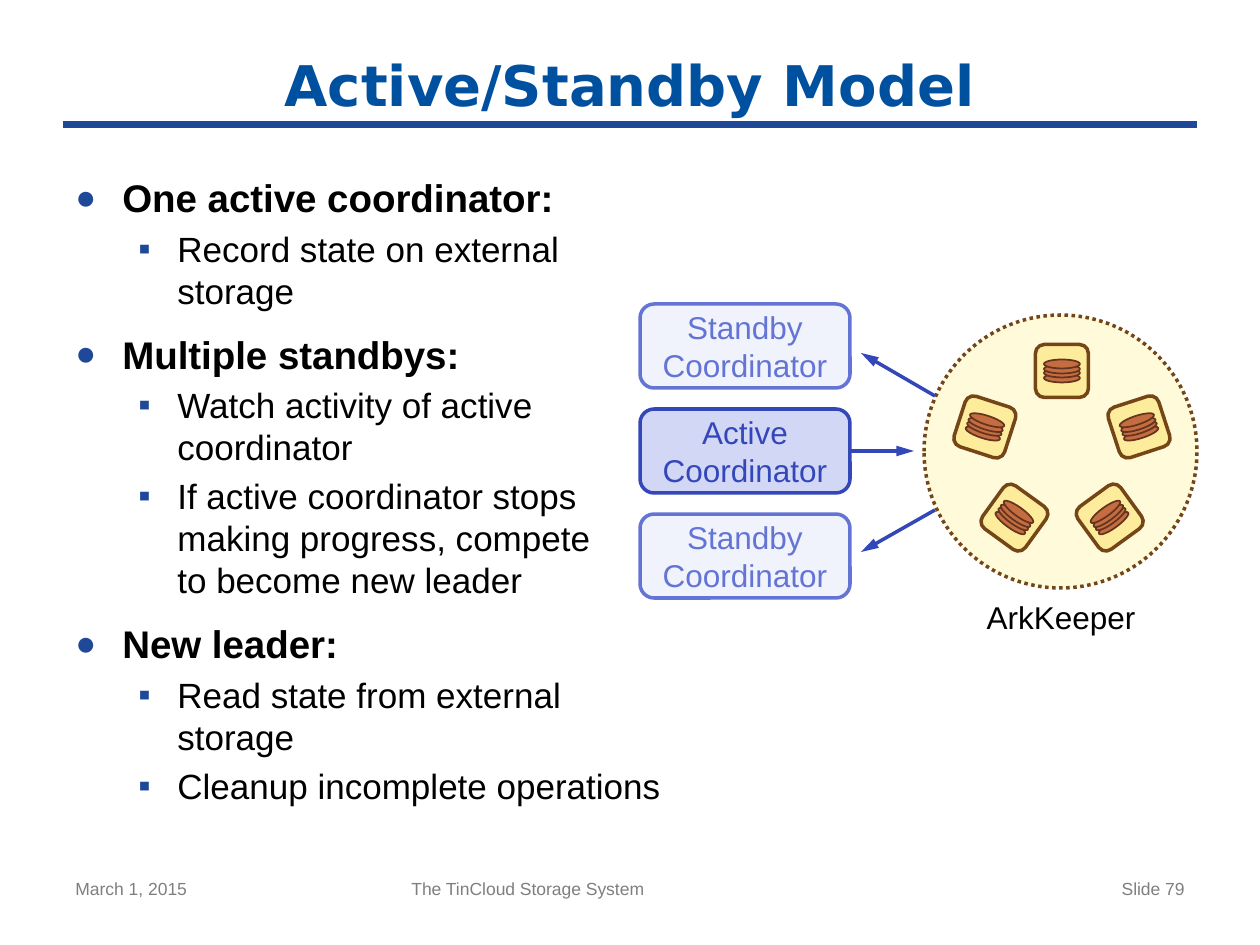
from math import cos, radians, sin

from lxml import etree
from pptx import Presentation
from pptx.dml.color import RGBColor
from pptx.enum.dml import MSO_LINE
from pptx.enum.shapes import MSO_CONNECTOR, MSO_SHAPE
from pptx.enum.text import MSO_ANCHOR, PP_ALIGN
from pptx.oxml.ns import qn
from pptx.util import Pt

PX = 914400 / 126
LEFT, CENTER, RIGHT = PP_ALIGN.LEFT, PP_ALIGN.CENTER, PP_ALIGN.RIGHT
TOP, MIDDLE = MSO_ANCHOR.TOP, MSO_ANCHOR.MIDDLE
ROUNDED, OVAL = MSO_SHAPE.ROUNDED_RECTANGLE, MSO_SHAPE.OVAL
STRAIGHT, DOTTED = MSO_CONNECTOR.STRAIGHT, MSO_LINE.ROUND_DOT
BOX_RIGHT = 3

COLORS = {
    "title": "0050A0", "rule": "1F4899", "text": "000000", "footer": "7F7F7F",
    "standby_fill": "F0F2FC", "standby": "6474D4",
    "active_fill": "D2D7F6", "active": "3447B8",
    "cluster": "FFFAD9", "server": "FEEC9D", "brown": "744516",
    "disk": "C56D41", "disk_line": "64351E",
}


def emu(px):
    return round(px * PX)


def rgb(name):
    return RGBColor.from_string(COLORS[name])


class SlideBuilder:
    font = "Arial"

    def __init__(self, slide):
        self.slide = slide

    def format(self, p, size, color, bold=False, font=None, align=LEFT):
        p.alignment = align
        for r in p.runs:
            r.font.size = Pt(size)
            r.font.bold = bold
            r.font.name = font or self.font
            r.font.color.rgb = rgb(color)

    def text(self, x, y, w, h, text, size, color, anchor=TOP, inset=True, **style):
        sp = self.slide.shapes.add_textbox(emu(x), emu(y), emu(w), emu(h))
        tf = sp.text_frame
        tf.word_wrap = True
        tf.vertical_anchor = anchor
        if not inset:
            tf.margin_left = tf.margin_right = tf.margin_top = tf.margin_bottom = 0
        tf.text = text
        self.format(tf.paragraphs[0], size, color, **style)

    def bullets(self, x, y, w, h, items):
        sp = self.slide.shapes.add_textbox(emu(x), emu(y), emu(w), emu(h))
        tf = sp.text_frame
        tf.word_wrap = True
        for i, (level, text) in enumerate(items):
            p = tf.add_paragraph() if i else tf.paragraphs[0]
            p.text = text
            p.level = level
            self.format(p, 20 if level else 22, "text", bold=not level)
            self.bullet(p, level)

    def bullet(self, p, level):
        # Percentage spacing, hanging indent and coloured bullet sign
        margin, hang, space, sign = ((102, 39, 20, "▪") if level
                                     else (47, 47, 50, "●"))
        pPr = p._p.get_or_add_pPr()
        pPr.set("marL", str(emu(margin)))
        pPr.set("indent", str(-emu(hang)))
        before = etree.SubElement(pPr, qn("a:spcBef"))
        etree.SubElement(before, qn("a:spcPct"), val=str(space * 1000))
        color = etree.SubElement(pPr, qn("a:buClr"))
        etree.SubElement(color, qn("a:srgbClr"), val=COLORS["rule"])
        if not level:
            etree.SubElement(pPr, qn("a:buSzPct"), val="90000")
        etree.SubElement(pPr, qn("a:buFont"), typeface=self.font)
        etree.SubElement(pPr, qn("a:buChar"), char=sign)

    def shape(self, kind, x, y, w, h, fill, line, width=2, rotation=0, parent=None):
        shapes = (parent or self.slide).shapes
        sp = shapes.add_shape(kind, emu(x), emu(y), emu(w), emu(h))
        sp.shadow.inherit = False
        sp.rotation = rotation
        sp.fill.solid()
        sp.fill.fore_color.rgb = rgb(fill)
        sp.line.color.rgb = rgb(line)
        sp.line.width = Pt(width)
        return sp

    def box(self, x, y, w, h, text, fill, color):
        sp = self.shape(ROUNDED, x, y, w, h, fill, color)
        tf = sp.text_frame
        tf.margin_top = tf.margin_bottom = 0
        tf.vertical_anchor = MIDDLE
        tf.text = text
        self.format(tf.paragraphs[0], 18, color, align=CENTER)
        return sp

    def server(self, cx, cy, turn, tilt):
        # A rounded square holding a tilted stack of four disks
        side, disk_w, disk_h = 53, 36, 9
        group = self.slide.shapes.add_group_shape()
        self.shape(ROUNDED, cx - side / 2, cy - side / 2, side, side,
                   "server", "brown", rotation=turn, parent=group)
        for offset in (7, 2, -2, -7):
            x = cx - offset * sin(radians(tilt))
            y = cy + offset * cos(radians(tilt))
            self.shape(OVAL, x - disk_w / 2, y - disk_h / 2, disk_w, disk_h,
                       "disk", "disk_line", 1, tilt, group)

    def line(self, x1, y1, x2, y2, color, width=2, arrow=True):
        cn = self.slide.shapes.add_connector(STRAIGHT, emu(x1), emu(y1), emu(x2), emu(y2))
        cn.line.color.rgb = rgb(color)
        cn.line.width = Pt(width)
        if arrow:
            etree.SubElement(cn.line._get_or_add_ln(), qn("a:tailEnd"),
                             type="triangle", w="med", len="lg")
        etree.SubElement(cn._element.spPr, qn("a:effectLst"))
        return cn


def main():
    prs = Presentation()
    prs.slide_width, prs.slide_height = emu(1260), emu(945)
    s = SlideBuilder(prs.slides.add_slide(prs.slide_layouts[6]))

    # Title and rule
    s.line(63, 125, 1197, 125, "rule", 4, arrow=False)
    s.text(63, 42, 1134, 84, "Active/Standby Model", 32, "title", MIDDLE,
           bold=True, font="DejaVu Sans", align=CENTER)

    # Bulleted outline
    s.bullets(63, 168, 630, 703, [
        (0, "One active coordinator:"),
        (1, "Record state on external storage"),
        (0, "Multiple standbys:"),
        (1, "Watch activity of active coordinator"),
        (1, "If active coordinator stops making progress, compete\vto become new leader"),
        (0, "New leader:"),
        (1, "Read state from external storage"),
        (1, "Cleanup incomplete operations"),
    ])

    # Footer
    for x, w, text, align in ((63, 294, "March 1, 2015", LEFT),
                              (399, 472, "The TinCloud Storage System", LEFT),
                              (903, 294, "Slide 79", RIGHT)):
        s.text(x, 872, w, 54, text, 10, "footer", align=align)

    # Storage cluster: five servers evenly spaced on a ring
    s.shape(OVAL, 924, 315, 273, 273, "cluster", "brown").line.dash_style = DOTTED
    s.text(982, 598, 158, 38, "ArkKeeper", 18, "text", inset=False, align=CENTER)
    for i, tilt in enumerate((0, -18, -36, 36, 18)):
        turn = i * 72
        s.server(1062 + 81 * sin(radians(turn)), 452 - 81 * cos(radians(turn)), turn, tilt)

    # Coordinators
    boxes = [s.box(640, 304 + 105 * i, 210, 84, f"{role}\vCoordinator",
                   f"{role.lower()}_fill", role.lower())
             for i, role in enumerate(("Standby", "Active", "Standby"))]

    # Arrows between coordinators and cluster
    s.line(850, 451, 914, 451, "active").begin_connect(boxes[1], BOX_RIGHT)
    s.line(935, 396, 861, 353, "active")
    s.line(935, 510, 861, 552, "active")

    prs.save("out.pptx")


if __name__ == "__main__":
    main()
